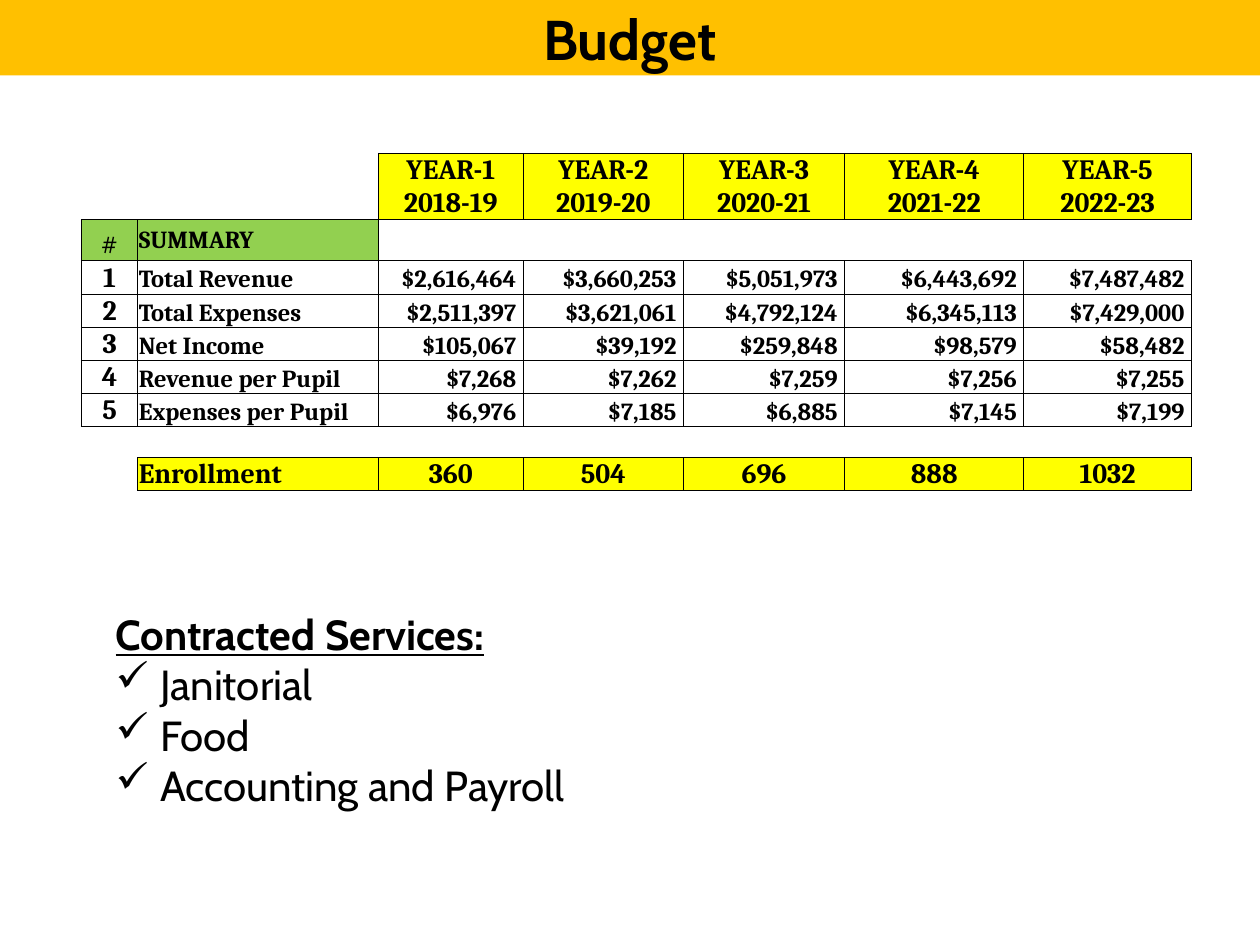
from dataclasses import dataclass

from lxml.etree import SubElement
from pptx import Presentation
from pptx.dml.color import RGBColor as RGB
from pptx.enum.text import MSO_ANCHOR as ANCHOR, MSO_AUTO_SIZE as AUTOSIZE, PP_ALIGN as ALIGN
from pptx.oxml.ns import qn
from pptx.util import Cm, Pt


@dataclass(frozen=True)
class Theme:
    heading_font: str = "Cabin"
    table_font: str = "Cambria"
    ink: str = "000000"
    banner: str = "FFC000"
    highlight: str = "FFFF00"
    summary: str = "92D050"
    title_size: int = 32
    body_size: int = 24
    large_size: int = 16
    small_size: int = 14
    blank_size: int = 12
    border: float = 0.5


YEARS = ["2018-19", "2019-20", "2020-21", "2021-22", "2022-23"]
SUMMARY = [
    ("Total Revenue", [2616464, 3660253, 5051973, 6443692, 7487482]),
    ("Total Expenses", [2511397, 3621061, 4792124, 6345113, 7429000]),
    ("Net Income", [105067, 39192, 259848, 98579, 58482]),
    ("Revenue per Pupil", [7268, 7262, 7259, 7256, 7255]),
    ("Expenses per Pupil", [6976, 7185, 6885, 7145, 7199]),
]
ENROLLMENT = [360, 504, 696, 888, 1032]
SERVICES = ["Janitorial", "Food", "Accounting and Payroll"]
COL_WIDTHS = [1.14, 4.85, 2.92, 3.23, 3.25, 3.61, 3.38]
ROW_HEIGHTS = [0.66, 0.66, 0.83] + [0.66] * len(SUMMARY) + [0.62, 0.66]
NO_STYLE = "{2D5ABB26-0587-4C30-8999-92F81FD0307C}"


class SlideBuilder:
    def __init__(self, slide, theme):
        self.slide, self.theme = slide, theme

    def style(self, p, font, size, bold=False, align=ALIGN.LEFT):
        p.alignment = align
        p.font.name, p.font.size, p.font.bold = font, Pt(size), bold
        p.font.color.rgb = RGB.from_string(self.theme.ink)

    def title(self, text, width, height):
        t, sp = self.theme, self.slide.shapes.title
        sp.left, sp.top, sp.width, sp.height = 0, 0, width, height
        sp.fill.solid()
        sp.fill.fore_color.rgb = RGB.from_string(t.banner)
        tf = sp.text_frame
        tf.text, tf.vertical_anchor, tf.auto_size = text, ANCHOR.MIDDLE, AUTOSIZE.NONE
        self.style(tf.paragraphs[0], t.heading_font, t.title_size, True, ALIGN.CENTER)

    def table(self, left, top, widths, heights):
        frame = self.slide.shapes.add_table(
            len(heights), len(widths), left, top, Cm(sum(widths)), Cm(sum(heights)))
        table = frame.table
        table.first_row = table.horz_banding = False
        table._tbl.tblPr.find(qn("a:tableStyleId")).text = NO_STYLE
        for col, width in zip(table.columns, widths):
            col.width = Cm(width)
        for row, height in zip(table.rows, heights):
            row.height = Cm(height)
        # Small type keeps blank rows from growing
        for cell in table.iter_cells():
            cell.margin_left = cell.margin_right = cell.margin_top = Cm(0.02)
            cell.margin_bottom = 0
            self.style(cell.text_frame.paragraphs[0], self.theme.table_font,
                       self.theme.blank_size)
        return table

    def cell(self, cell, text, size, align=ALIGN.CENTER, anchor=ANCHOR.BOTTOM,
             fill=None, bold=True, sides="LRTB"):
        cell.text, cell.vertical_anchor = text, anchor
        self.style(cell.text_frame.paragraphs[0], self.theme.table_font, size, bold, align)
        if align == ALIGN.RIGHT:
            cell.margin_right = Cm(0.14)
        # Borders come before the fill in the cell properties
        tcPr = cell._tc.get_or_add_tcPr()
        for side in sides:
            ln = SubElement(tcPr, qn(f"a:ln{side}"), w=str(Pt(self.theme.border)))
            SubElement(SubElement(ln, qn("a:solidFill")), qn("a:srgbClr"), val=self.theme.ink)
        if fill:
            cell.fill.solid()
            cell.fill.fore_color.rgb = RGB.from_string(fill)

    def checklist(self, heading, items, left, top, width, height):
        t = self.theme
        tf = self.slide.shapes.add_textbox(left, top, width, height).text_frame
        tf.word_wrap = True
        p = tf.paragraphs[0]
        p.text = heading
        self.style(p, t.heading_font, t.body_size, True)
        p.font.underline = True
        for item in items:
            p = tf.add_paragraph()
            p.text = item
            self.style(p, t.heading_font, t.body_size)
            pPr = p._p.get_or_add_pPr()
            pPr.set("marL", str(Cm(0.9)))
            pPr.set("indent", str(-Cm(0.9)))
            bullet = pPr.makeelement(qn("a:buChar"), {"char": "✓"})
            pPr.find(qn("a:defRPr")).addprevious(bullet)


def main():
    prs = Presentation()
    prs.slide_width, prs.slide_height = Cm(25.4), Cm(19.05)
    theme = Theme()
    s = SlideBuilder(prs.slides.add_slide(prs.slide_layouts[5]), theme)
    large, small = theme.large_size, theme.small_size

    # Banner
    s.title("Budget", prs.slide_width, Cm(1.52))

    # Year headings, two rows that share one box
    table = s.table(Cm(1.64), Cm(3.09), COL_WIDTHS, ROW_HEIGHTS)
    for i, year in enumerate(YEARS):
        s.cell(table.cell(0, i + 2), f"YEAR-{i + 1}", large, fill=theme.highlight, sides="LRT")
        s.cell(table.cell(1, i + 2), year, large, fill=theme.highlight, sides="LRB")

    # Summary rows
    s.cell(table.cell(2, 0), "#", large, fill=theme.summary, bold=False)
    s.cell(table.cell(2, 1), "SUMMARY", small, ALIGN.LEFT, ANCHOR.MIDDLE, theme.summary)
    for n, (label, amounts) in enumerate(SUMMARY, 1):
        s.cell(table.cell(n + 2, 0), str(n), large)
        s.cell(table.cell(n + 2, 1), label, small, ALIGN.LEFT)
        for c, amount in enumerate(amounts, 2):
            s.cell(table.cell(n + 2, c), f"${amount:,}", small, ALIGN.RIGHT)

    # Enrollment row
    last = len(ROW_HEIGHTS) - 1
    s.cell(table.cell(last, 1), "Enrollment", large, ALIGN.LEFT, fill=theme.highlight)
    for c, pupils in enumerate(ENROLLMENT, 2):
        s.cell(table.cell(last, c), str(pupils), large, anchor=ANCHOR.MIDDLE,
               fill=theme.highlight)

    # Services
    s.checklist("Contracted Services:", SERVICES, Cm(2.08), Cm(12.14), Cm(14.27), Cm(4.52))
    prs.save("out.pptx")


if __name__ == "__main__":
    main()
